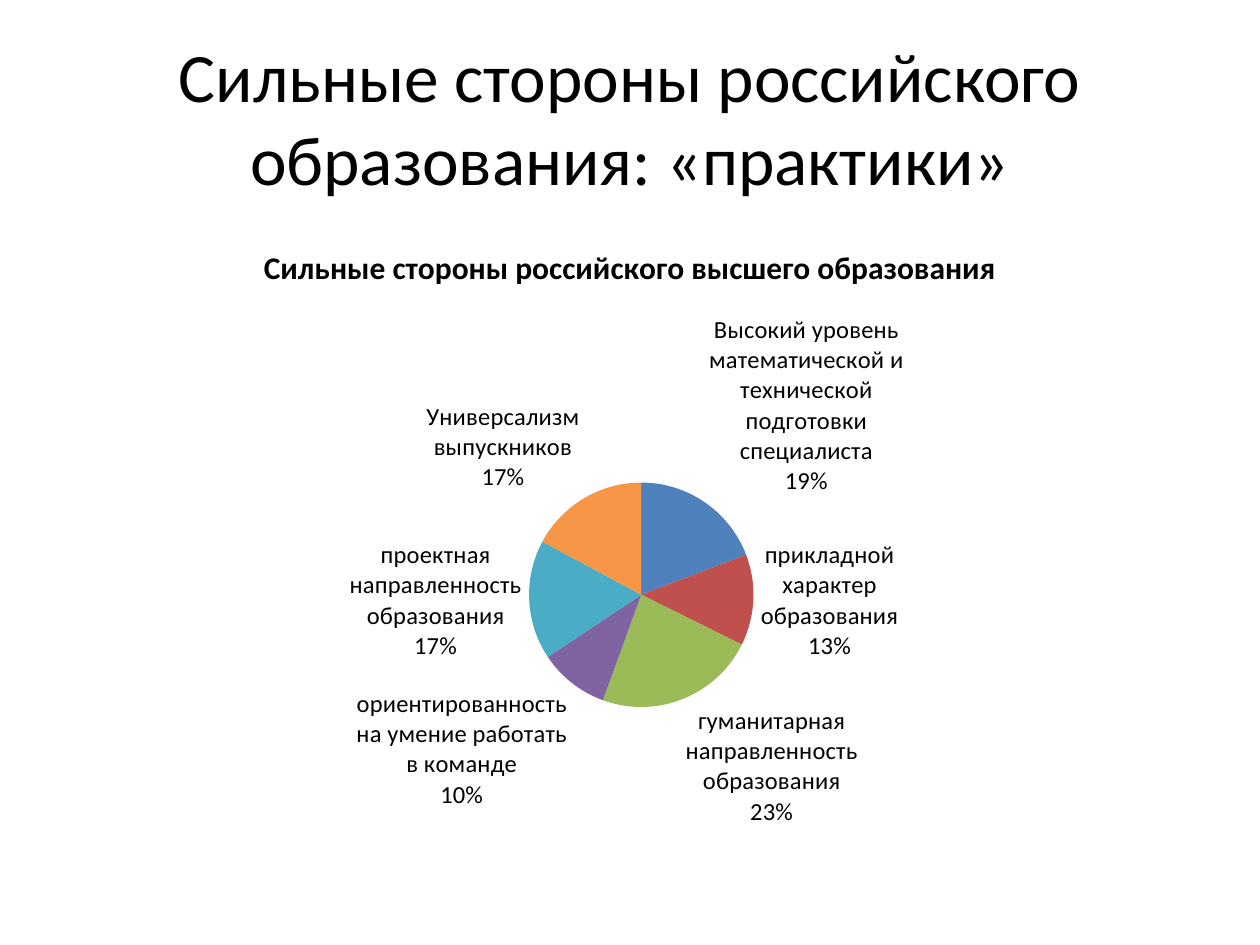
from lxml import etree
from pptx import Presentation
from pptx.chart.data import CategoryChartData
from pptx.dml.color import RGBColor
from pptx.enum import chart as ch, text
from pptx.oxml.ns import qn
from pptx.util import Cm, Pt

BLACK = RGBColor(0x00, 0x00, 0x00)
BLUE = RGBColor(0x4F, 0x81, 0xBD)
RED = RGBColor(0xC0, 0x50, 0x4D)
GREEN = RGBColor(0x9B, 0xBB, 0x59)
PURPLE = RGBColor(0x80, 0x64, 0xA2)
TEAL = RGBColor(0x4B, 0xAC, 0xC6)
ORANGE = RGBColor(0xF7, 0x96, 0x46)

CHART_TITLE = "Сильные стороны российского высшего образования"
STRENGTHS = [
    ("Высокий уровень математической и технической подготовки специалиста", 19, BLUE),
    ("прикладной характер образования", 13, RED),
    ("гуманитарная направленность образования", 23, GREEN),
    ("ориентированность на умение работать в команде", 10, PURPLE),
    ("проектная направленность образования", 17, TEAL),
    ("Универсализм выпускников", 17, ORANGE),
]
PIE_AREA = {"x": 0.41, "y": 0.42, "w": 0.2, "h": 0.36}


def set_attrs(obj, values):
    for name, value in values.items():
        setattr(obj, name, value)


def format_font(font, size, bold=False):
    set_attrs(font, {"name": "Calibri", "size": Pt(size), "bold": bold})
    font.color.rgb = BLACK


def add_title(slide, left, top, width, height):
    sp = slide.shapes.title
    set_attrs(sp, {"left": left, "top": top, "width": width, "height": height})
    tf = sp.text_frame
    set_attrs(tf, {"word_wrap": True, "vertical_anchor": text.MSO_ANCHOR.MIDDLE})
    p = tf.paragraphs[0]
    p.alignment = text.PP_ALIGN.CENTER
    r = p.add_run()
    r.text = "Сильные стороны российского образования: «практики»"
    format_font(r.font, 39.6)


def place_pie(chart, area):
    """Fix the inner plot area as fractions of the chart box."""
    plot_area = chart._chartSpace.chart.plotArea
    for old in plot_area.findall(qn("c:layout")):
        plot_area.remove(old)
    layout = etree.Element(qn("c:layout"))
    manual = etree.SubElement(layout, qn("c:manualLayout"))
    settings = {"layoutTarget": "inner", "xMode": "edge", "yMode": "edge", **area}
    for tag, value in settings.items():
        etree.SubElement(manual, qn(f"c:{tag}")).set("val", str(value))
    plot_area.insert(0, layout)


def add_strengths_pie(slide, left, top, width, height):
    names, values, colors = zip(*STRENGTHS)
    data = CategoryChartData()
    data.categories = names
    data.add_series(CHART_TITLE, values)
    chart = slide.shapes.add_chart(
        ch.XL_CHART_TYPE.PIE, left, top, width, height, data).chart
    set_attrs(chart, {"has_legend": False, "has_title": True})
    format_font(chart.font, 10)

    tf = chart.chart_title.text_frame
    tf.text = CHART_TITLE
    format_font(tf.paragraphs[0].runs[0].font, 18, bold=True)
    chart.chart_title.include_in_layout = False

    plot = chart.plots[0]
    set_attrs(plot, {"vary_by_categories": True, "has_data_labels": True})
    labels = plot.data_labels
    set_attrs(labels, {
        "show_category_name": True,
        "show_percentage": True,
        "show_value": False,
        "number_format": "0%",
        "number_format_is_linked": False,
        "position": ch.XL_LABEL_POSITION.OUTSIDE_END,
    })
    format_font(labels.font, 14)
    separator = etree.Element(qn("c:separator"))
    separator.text = "\n"
    labels._element.find(qn("c:showBubbleSize")).addnext(separator)

    for i, color in enumerate(colors):
        fill = plot.series[0].points[i].format.fill
        fill.solid()
        fill.fore_color.rgb = color
    place_pie(chart, PIE_AREA)


def main():
    prs = Presentation()
    set_attrs(prs, {"slide_width": Cm(25.4), "slide_height": Cm(19.05)})
    slide = prs.slides.add_slide(prs.slide_layouts[5])
    margin, width = Cm(1.27), Cm(22.86)
    add_title(slide, margin, Cm(0.76), width, Cm(3.18))
    add_strengths_pie(slide, margin, Cm(4.45), width, Cm(12.57))
    prs.save("out.pptx")


if __name__ == "__main__":
    main()
